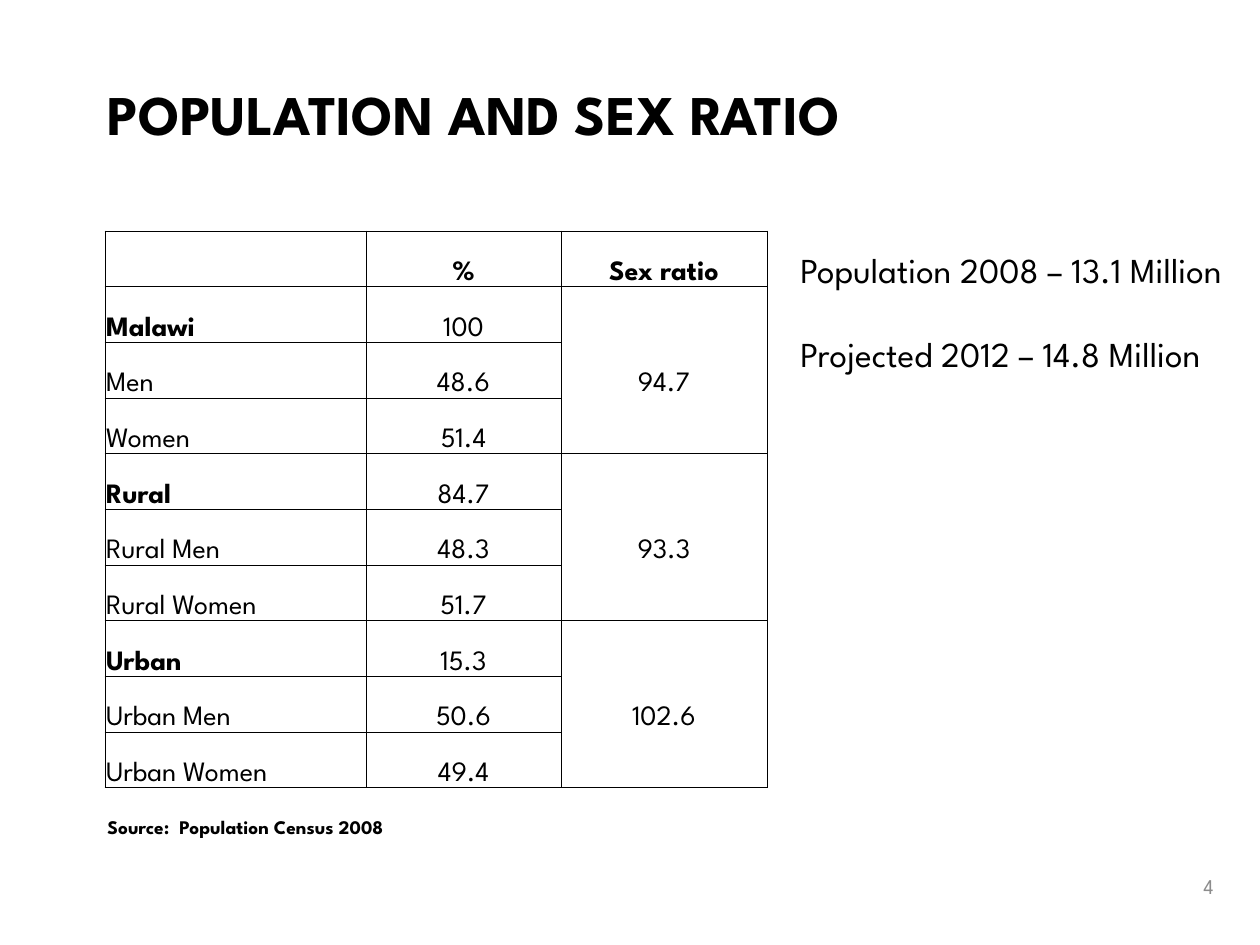
from lxml import etree
from pptx import Presentation
from pptx import util as u
from pptx.dml.color import RGBColor
from pptx.enum import text
from pptx.oxml.ns import qn

PX = 914400 / 126
FONT = "League Spartan"
COLORS = {"ink": "000000", "number": "8C8C8C"}
LEFT, CENTER, RIGHT = text.PP_ALIGN.LEFT, text.PP_ALIGN.CENTER, text.PP_ALIGN.RIGHT


def px(value):
    return u.Emu(round(value * PX))


def write(frame, lines, size=16, color="ink", bold=False, align=LEFT,
          anchor=text.MSO_ANCHOR.TOP, wrap=True, gap=0):
    frame.word_wrap = wrap
    frame.vertical_anchor = anchor
    for index, line in enumerate(lines.split("\n")):
        paragraph = frame.add_paragraph() if index else frame.paragraphs[0]
        paragraph.alignment = align
        paragraph.space_before = u.Pt(gap if index else 0)
        run = paragraph.add_run()
        run.text = line
        run.font.name = FONT
        run.font.size = u.Pt(size)
        run.font.bold = bold
        run.font.color.rgb = RGBColor.from_string(COLORS[color])


presentation = Presentation()
presentation.slide_width, presentation.slide_height = px(1260), px(945)
slide = presentation.slides.add_slide(presentation.slide_layouts[5])

# Title
title = slide.shapes.title
title.left, title.top, title.width, title.height = px(95), px(73), px(1134), px(105)
write(title.text_frame, "POPULATION AND SEX RATIO", size=32, bold=True)

# Population table: each area has three rows and one sex ratio
areas = [
    ("94.7", [("Malawi", "100"), ("Men", "48.6"), ("Women", "51.4")]),
    ("93.3", [("Rural", "84.7"), ("Rural Men", "48.3"), ("Rural Women", "51.7")]),
    ("102.6", [("Urban", "15.3"), ("Urban Men", "50.6"), ("Urban Women", "49.4")]),
]
rows = [("", "%", "Sex ratio")]
for ratio, groups in areas:
    for position, (label, share) in enumerate(groups):
        rows.append((label, share, ratio if position == 1 else ""))

column_widths = [261, 195, 206]
table_height = 557
table = slide.shapes.add_table(len(rows), 3, px(105), px(231),
                               px(sum(column_widths)), px(table_height)).table
table.first_row = table.horz_banding = False
for column, width in zip(table.columns, column_widths):
    column.width = px(width)

for row_index, values in enumerate(rows):
    table.rows[row_index].height = px(table_height / len(rows))
    position = (row_index - 1) % 3  # place of the row within its area
    for column_index, value in enumerate(values):
        cell = table.cell(row_index, column_index)
        cell.margin_left = cell.margin_right = cell.margin_top = px(1)
        cell.margin_bottom = 0
        cell.vertical_anchor = text.MSO_ANCHOR.BOTTOM
        if value:
            bold = row_index == 0 or (column_index == 0 and position == 0)
            write(cell.text_frame, value, bold=bold,
                  align=CENTER if column_index else LEFT,
                  anchor=text.MSO_ANCHOR.BOTTOM)

        # The ratio column has no lines inside an area
        hidden = set()
        if column_index == 2 and row_index > 0:
            hidden = {0: {"B"}, 1: {"T", "B"}, 2: {"T"}}[position]
        properties = cell._tc.get_or_add_tcPr()
        for side in "LRTB":
            line = etree.SubElement(properties, qn(f"a:ln{side}"), w=str(u.Pt(0.5)))
            if side in hidden:
                etree.SubElement(line, qn("a:noFill"))
            else:
                fill = etree.SubElement(line, qn("a:solidFill"))
                etree.SubElement(fill, qn("a:srgbClr"), val=COLORS["ink"])
        cell.fill.background()

# Source, population figures and slide number
boxes = [
    ((95, 809, 305, 44), "Source:  Population Census 2008",
     dict(size=11, bold=True, wrap=False)),
    ((788, 242, 472, 310),
     "Population 2008 – 13.1 Million\nProjected 2012 – 14.8 Million",
     dict(size=20, gap=24)),
    ((932, 861, 294, 50), "4",
     dict(size=12, color="number", align=RIGHT, anchor=text.MSO_ANCHOR.MIDDLE)),
]
for place, content, style in boxes:
    box = slide.shapes.add_textbox(*map(px, place))
    write(box.text_frame, content, **style)

presentation.save("out.pptx")
